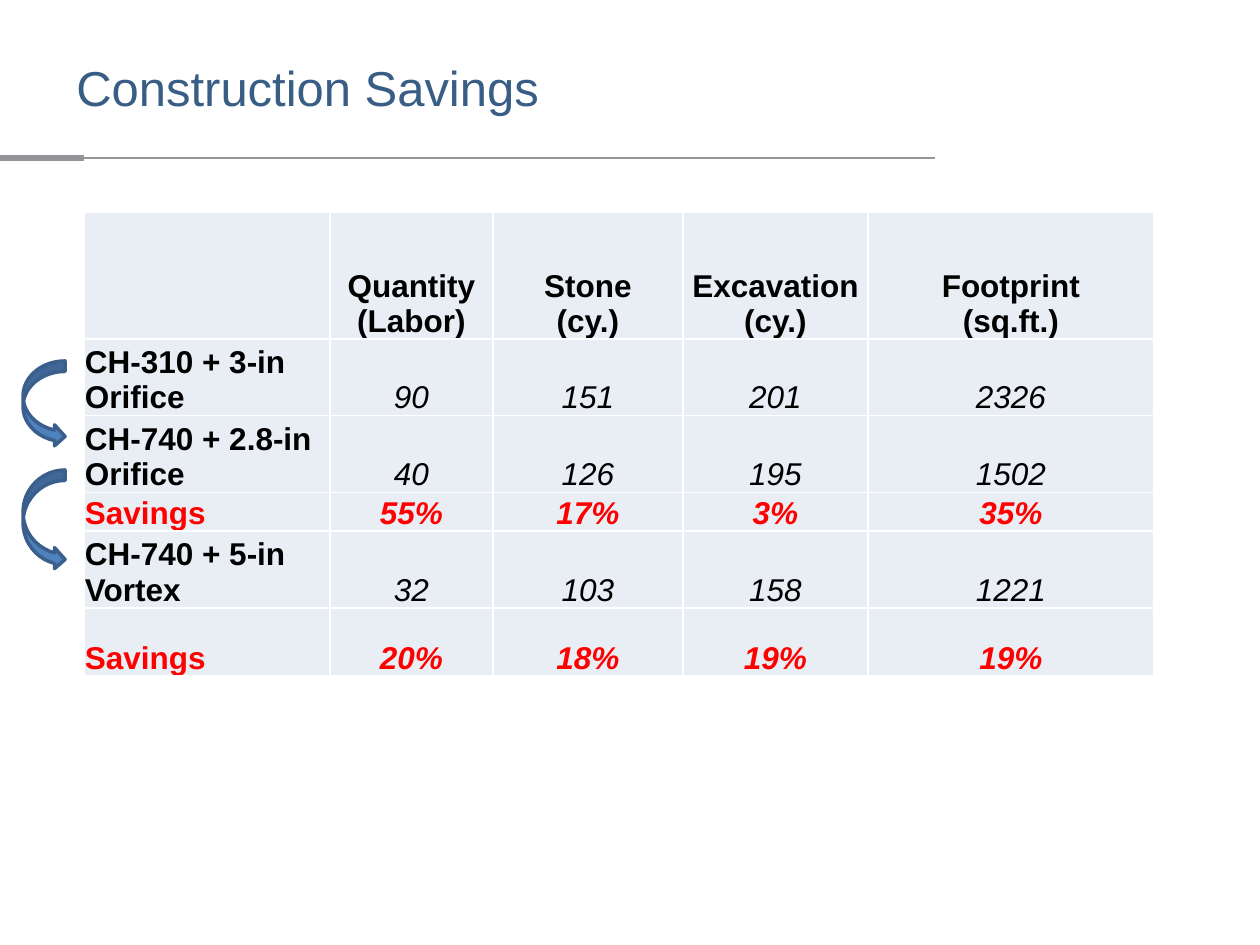
import lxml.etree
import pptx
import pptx.dml.color
import pptx.enum.shapes
import pptx.enum.text
import pptx.oxml.ns
import pptx.util

FONT = "Arial"
RED = "FF0000"
BLACK = "000000"
COLUMN_WIDTHS = [246, 163, 190, 185, 286]
ROW_HEIGHTS = [127, 72, 72, 38, 72, 68]
ROWS = [
    ["", "Quantity\n(Labor)", "Stone\n(cy.)", "Excavation (cy.)", "Footprint\n(sq.ft.)"],
    ["CH-310 + 3-in Orifice", "90", "151", "201", "2326"],
    ["CH-740 + 2.8-in Orifice", "40", "126", "195", "1502"],
    ["Savings", "55%", "17%", "3%", "35%"],
    ["CH-740 + 5-in Vortex", "32", "103", "158", "1221"],
    ["Savings", "20%", "18%", "19%", "19%"],
]


def px(length):
    return pptx.util.Emu(round(length * 914400 / 126))


def color(value):
    return pptx.dml.color.RGBColor.from_string(value)


def set_font(font, size, value, bold=False, italic=False):
    font.name = FONT
    font.size = pptx.util.Pt(size)
    font.color.rgb = color(value)
    font.bold = bold
    font.italic = italic


def add_rule(page, start, end, y, weight):
    rule = page.shapes.add_connector(
        pptx.enum.shapes.MSO_CONNECTOR.STRAIGHT, px(start), px(y), px(end), px(y))
    rule.line.color.rgb = color("939598")
    rule.line.width = pptx.util.Pt(weight)
    lxml.etree.SubElement(rule._element.spPr, pptx.oxml.ns.qn("a:effectLst"))


def add_title(page, text):
    box = page.shapes.add_textbox(px(64), px(16), px(926), px(142))
    frame = box.text_frame
    frame.word_wrap = True
    frame.vertical_anchor = pptx.enum.text.MSO_ANCHOR.MIDDLE
    frame.text = text
    set_font(frame.paragraphs[0].font, 28, "395E85")


def set_borders(cell, value):
    qn = pptx.oxml.ns.qn
    properties = cell._tc.get_or_add_tcPr()
    for position, side in enumerate(("a:lnL", "a:lnR", "a:lnT", "a:lnB")):
        line = lxml.etree.Element(qn(side), w=str(pptx.util.Pt(1)))
        fill = lxml.etree.SubElement(line, qn("a:solidFill"))
        lxml.etree.SubElement(fill, qn("a:srgbClr"), val=value)
        properties.insert(position, line)


def fill_cell(cell, text, is_header, is_label, is_savings):
    cell.fill.solid()
    cell.fill.fore_color.rgb = color("E9EDF4")
    set_borders(cell, "FFFFFF")
    cell.margin_left = cell.margin_right = cell.margin_top = px(1)
    cell.margin_bottom = 0
    cell.vertical_anchor = pptx.enum.text.MSO_ANCHOR.BOTTOM
    cell.text_frame.text = text
    align = pptx.enum.text.PP_ALIGN
    for para in cell.text_frame.paragraphs:
        para.alignment = align.LEFT if is_label else align.CENTER
        set_font(para.font, 18, RED if is_savings else BLACK,
                 bold=is_header or is_label or is_savings,
                 italic=not (is_header or is_label))


def add_savings_table(page):
    table = page.shapes.add_table(
        len(ROWS), len(COLUMN_WIDTHS), px(84), px(212),
        px(sum(COLUMN_WIDTHS)), px(sum(ROW_HEIGHTS))).table
    for column, width in zip(table.columns, COLUMN_WIDTHS):
        column.width = px(width)
    for row, height in zip(table.rows, ROW_HEIGHTS):
        row.height = px(height)
    for row_index, texts in enumerate(ROWS):
        for column_index, text in enumerate(texts):
            fill_cell(table.cell(row_index, column_index), text,
                      row_index == 0, column_index == 0, texts[0] == "Savings")


def add_arrow(page, top, height):
    arrow = page.shapes.add_shape(
        pptx.enum.shapes.MSO_SHAPE.CURVED_RIGHT_ARROW,
        px(23), px(top), px(42), px(height))
    arrow.shadow.inherit = False
    arrow.fill.solid()
    arrow.fill.fore_color.rgb = color("4F81BD")
    arrow.line.color.rgb = color("3A5F8C")
    arrow.line.width = pptx.util.Pt(2)


def main():
    deck = pptx.Presentation()
    deck.slide_width = px(1260)
    deck.slide_height = px(945)
    page = deck.slides.add_slide(deck.slide_layouts[6])
    add_rule(page, 0, 935, 158, 1)
    add_rule(page, 0, 84, 158, 3)
    add_title(page, "Construction Savings")
    add_savings_table(page)
    add_arrow(page, 361, 86)
    add_arrow(page, 470, 100)
    deck.save("out.pptx")


if __name__ == "__main__":
    main()
